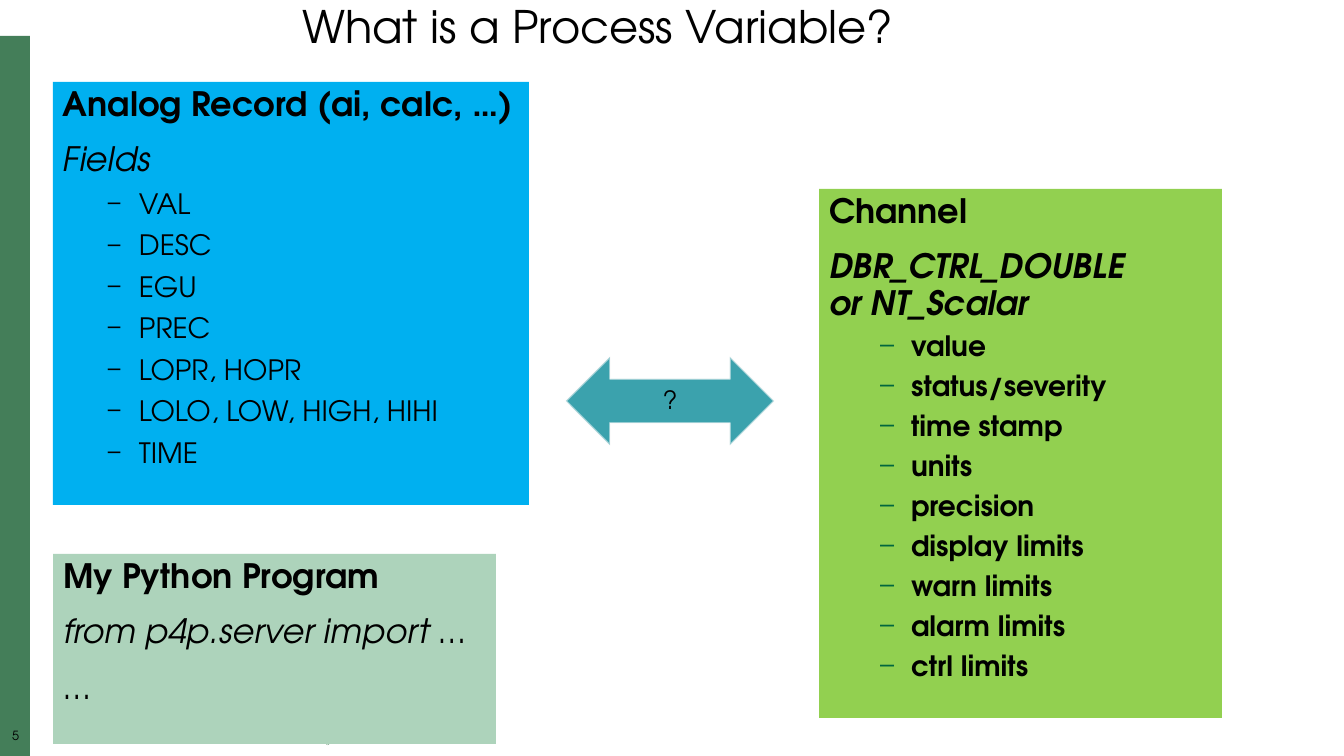
from lxml.etree import SubElement
from pptx import Presentation
from pptx.dml.color import RGBColor
from pptx.enum.shapes import MSO_SHAPE as Shape
from pptx.enum.text import MSO_ANCHOR as Anchor, MSO_AUTO_SIZE as Fit, PP_ALIGN as Align
from pptx.oxml.ns import qn
from pptx.util import Pt

PX = 914400 / 100.8
FACE = "TeX Gyre Adventor"
BLACK = RGBColor(0x00, 0x00, 0x00)
BAR = RGBColor(0x44, 0x7E, 0x59)
BLUE = RGBColor(0x00, 0xB0, 0xF0)
LIME = RGBColor(0x92, 0xD0, 0x50)
MINT = RGBColor(0xAD, 0xD3, 0xBB)
TEAL = RGBColor(0x3B, 0xA2, 0xAD)
PALE = RGBColor(0xF9, 0xF9, 0xF9)
PINE = RGBColor(0x01, 0x67, 0x3E)

TITLE = "What is a Process Variable?"
PAGE = "5"
CARDS = [
    dict(box=(53, 82, 476, 423), fill=BLUE, head="Analog Record (ai, calc, …)",
         notes=["Fields"], bold=False, dash=BLACK, size=90, left=76, gap=8,
         items=["VAL", "DESC", "EGU", "PREC", "LOPR, HOPR",
                "LOLO, LOW, HIGH, HIHI", "TIME"]),
    dict(box=(819, 189, 403, 529), fill=LIME, head="Channel",
         notes=["DBR_CTRL_DOUBLE\vor NT_Scalar"], bold=True, dash=PINE,
         size=100, left=82, gap=7,
         items=["value", "status/severity", "time stamp", "units", "precision",
                "display limits", "warn limits", "alarm limits", "ctrl limits"]),
    dict(box=(53, 554, 443, 190), fill=MINT, head="My Python Program",
         notes=["from p4p.server import …", "…"], bold=False, items=[]),
]


def px(n):
    return round(n * PX)


def place(box):
    return [px(n) for n in box]


def shape(slide, kind, box, fill):
    new = slide.shapes.add_shape(kind, *place(box))
    new.shadow.inherit = False
    new.fill.solid()
    new.fill.fore_color.rgb = fill
    new.line.fill.background()
    return new


def frame(new, pad=(10, 5), anchor=Anchor.TOP):
    text = new.text_frame
    text.word_wrap = True
    text.auto_size = Fit.NONE
    text.vertical_anchor = anchor
    text.margin_left = text.margin_right = px(pad[0])
    text.margin_top = text.margin_bottom = px(pad[1])
    return text


def write(para, words, size, align=Align.LEFT, gap=0, bold=False,
          italic=False, color=BLACK, face=FACE):
    para.text = words
    para.alignment = align
    para.line_spacing = 0.9
    para.space_before = Pt(gap)
    font = para.font
    font.name, font.size = face, Pt(size)
    font.bold, font.italic = bold, italic
    font.color.rgb = color


def bullet(para, color, size, left):
    props = para._p.get_or_add_pPr()
    props.set("marL", str(px(left)))
    props.set("indent", str(px(-31)))
    tint = SubElement(props, qn("a:buClr"))
    SubElement(tint, qn("a:srgbClr"), val=str(color))
    SubElement(props, qn("a:buSzPct"), val=str(size * 1000))
    SubElement(props, qn("a:buFont"), typeface=FACE)
    SubElement(props, qn("a:buChar"), char="–")


def label(slide, box, words, size, pad, **style):
    text = frame(slide.shapes.add_textbox(*place(box)), pad)
    write(text.paragraphs[0], words, size, Align.CENTER, **style)


def card(slide, data):
    text = frame(shape(slide, Shape.RECTANGLE, data["box"], data["fill"]))
    write(text.paragraphs[0], data["head"], 24, bold=True)
    for note in data["notes"]:
        write(text.add_paragraph(), note, 24, gap=14, bold=data["bold"], italic=True)
    for item in data["items"]:
        para = text.add_paragraph()
        para.level = 1
        bullet(para, data["dash"], data["size"], data["left"])
        write(para, item, 20, gap=data["gap"], bold=data["bold"])


def arrow(slide):
    new = shape(slide, Shape.LEFT_RIGHT_ARROW, (566, 357, 208, 88), TEAL)
    new.line.color.rgb = PALE
    new.line.width = Pt(1.35)
    tint = new.line.fill._xPr.find(".//" + qn("a:ln")).find(".//" + qn("a:srgbClr")) \
        if new.line.fill._xPr.tag != qn("a:ln") else new.line.fill._xPr.find(".//" + qn("a:srgbClr"))
    SubElement(tint, qn("a:alpha"), val="50000")
    text = frame(new, (20, 20), Anchor.MIDDLE)
    write(text.paragraphs[0], "?", 18, Align.CENTER)


def main():
    """Build the process variable slide."""
    deck = Presentation()
    deck.slide_width, deck.slide_height = px(1344), px(756)
    slide = deck.slides.add_slide(deck.slide_layouts[5])
    title = slide.shapes.title
    title.left, title.top, title.width, title.height = place((292, 0, 800, 59))
    write(frame(title).paragraphs[0], TITLE, 32)
    shape(slide, Shape.RECTANGLE, (0, 36, 30, 720), BAR)
    label(slide, (0, 730, 31, 17), PAGE, 9, (0, 0))
    label(slide, (168, 735, 320, 20), PAGE, 5, (10, 5), color=BAR, face="Times New Roman")
    for data in CARDS:
        card(slide, data)
    arrow(slide)
    deck.save("out.pptx")


if __name__ == "__main__":
    main()
